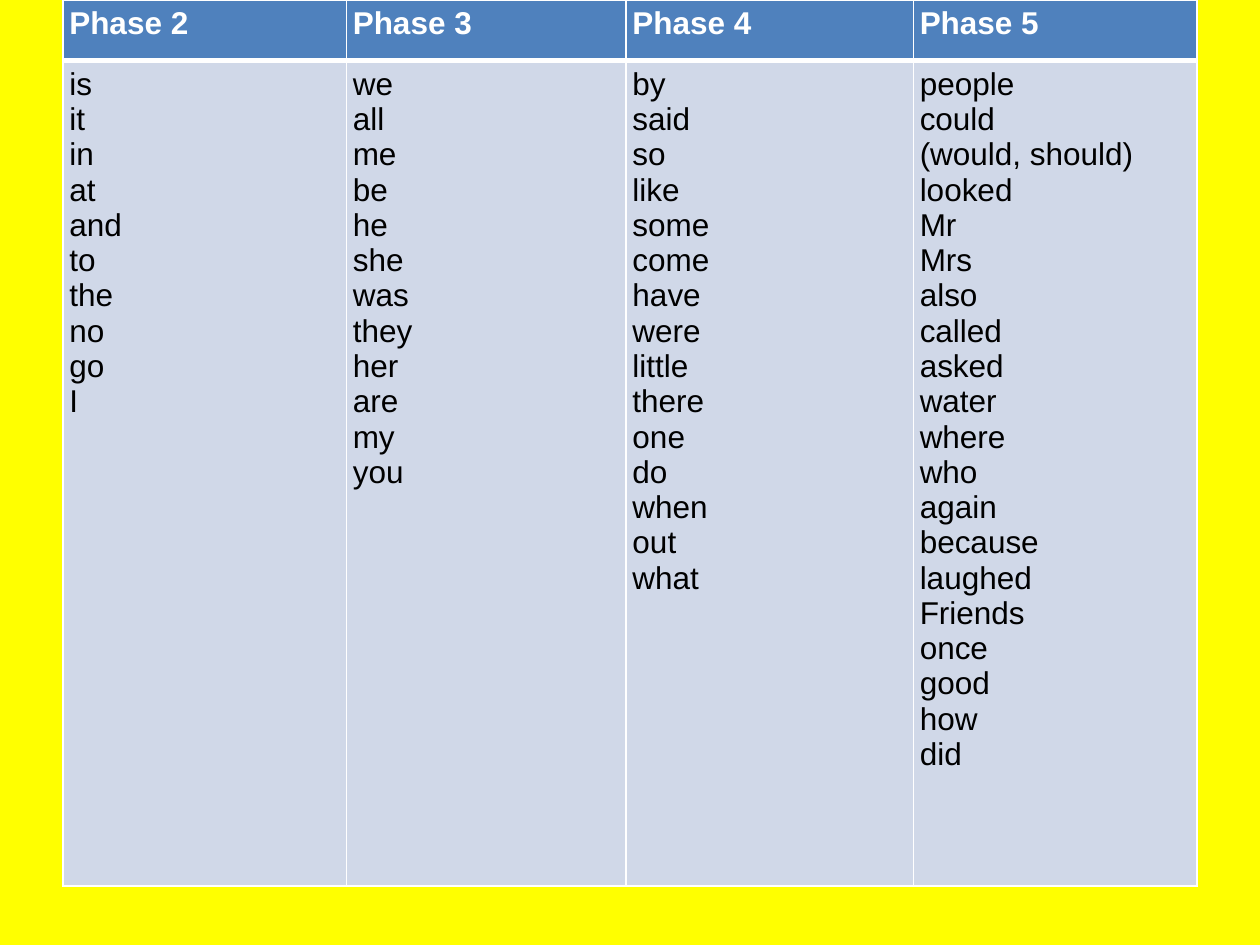
from dataclasses import dataclass

from lxml.etree import SubElement
from pptx import Presentation
from pptx.dml.color import RGBColor
from pptx.oxml.ns import qn
from pptx.slide import Slide
from pptx.table import _Cell
from pptx.util import Inches, Pt


@dataclass(frozen=True)
class Theme:
    background: str = "FFFF00"
    border: str = "FFFFFF"
    font: str = "Arial"
    size: int = 18
    thin: int = 1
    thick: int = 3
    inset: float = 0.05


@dataclass(frozen=True)
class CellStyle:
    fill: str
    color: str
    bold: bool
    top: int
    bottom: int


@dataclass(frozen=True)
class Phase:
    title: str
    width: float
    words: tuple[str, ...]


THEME = Theme()
HEADER = CellStyle("4F81BD", "FFFFFF", True, THEME.thin, THEME.thick)
BODY = CellStyle("D0D8E8", "000000", False, THEME.thick, THEME.thin)
ROW_HEIGHTS = (0.48, 6.55)

PHASES = (
    Phase("Phase 2", 2.25, tuple("is it in at and to the no go I".split())),
    Phase("Phase 3", 2.22, tuple(
        "we all me be he she was they her are my you".split())),
    Phase("Phase 4", 2.28, tuple(
        "by said so like some come have were little there one do when out what".split())),
    Phase("Phase 5", 2.25, (
        "people", "could", "(would, should)", "looked", "Mr", "Mrs", "also",
        "called", "asked", "water", "where", "who", "again", "because",
        "laughed", "Friends", "once", "good", "how", "did")),
)


def add_borders(cell: _Cell, style: CellStyle) -> None:
    """Add the cell's edge lines; the schema wants them before the fill."""
    tc_pr = cell._tc.get_or_add_tcPr()
    widths = {"L": THEME.thin, "R": THEME.thin, "T": style.top, "B": style.bottom}
    for side, width in widths.items():
        ln = SubElement(tc_pr, qn(f"a:ln{side}"), w=str(Pt(width)))
        fill = SubElement(ln, qn("a:solidFill"))
        SubElement(fill, qn("a:srgbClr"), val=THEME.border)


def fill_cell(cell: _Cell, lines: tuple[str, ...], style: CellStyle) -> None:
    for side in ("left", "right", "top", "bottom"):
        setattr(cell, f"margin_{side}", Inches(THEME.inset))
    add_borders(cell, style)
    cell.fill.solid()
    cell.fill.fore_color.rgb = RGBColor.from_string(style.fill)

    font_format = {"name": THEME.font, "size": Pt(THEME.size), "bold": style.bold}
    tf = cell.text_frame
    tf.text = "\n".join(lines)
    for p in tf.paragraphs:
        for r in p.runs:
            for name, value in font_format.items():
                setattr(r.font, name, value)
            r.font.color.rgb = RGBColor.from_string(style.color)


def add_phase_table(s: Slide, phases: tuple[Phase, ...]) -> None:
    width = sum(phase.width for phase in phases)
    table = s.shapes.add_table(
        len(ROW_HEIGHTS), len(phases), Inches(0.5), Inches(0),
        Inches(width), Inches(sum(ROW_HEIGHTS))).table
    for row, height in zip(table.rows, ROW_HEIGHTS):
        row.height = Inches(height)
    for i, phase in enumerate(phases):
        table.columns[i].width = Inches(phase.width)
        fill_cell(table.cell(0, i), (phase.title,), HEADER)
        fill_cell(table.cell(1, i), phase.words, BODY)


def main() -> None:
    prs = Presentation()
    prs.slide_width, prs.slide_height = Inches(10), Inches(7.5)
    s = prs.slides.add_slide(prs.slide_layouts[6])
    s.background.fill.solid()
    s.background.fill.fore_color.rgb = RGBColor.from_string(THEME.background)
    add_phase_table(s, PHASES)
    prs.save("out.pptx")


if __name__ == "__main__":
    main()
